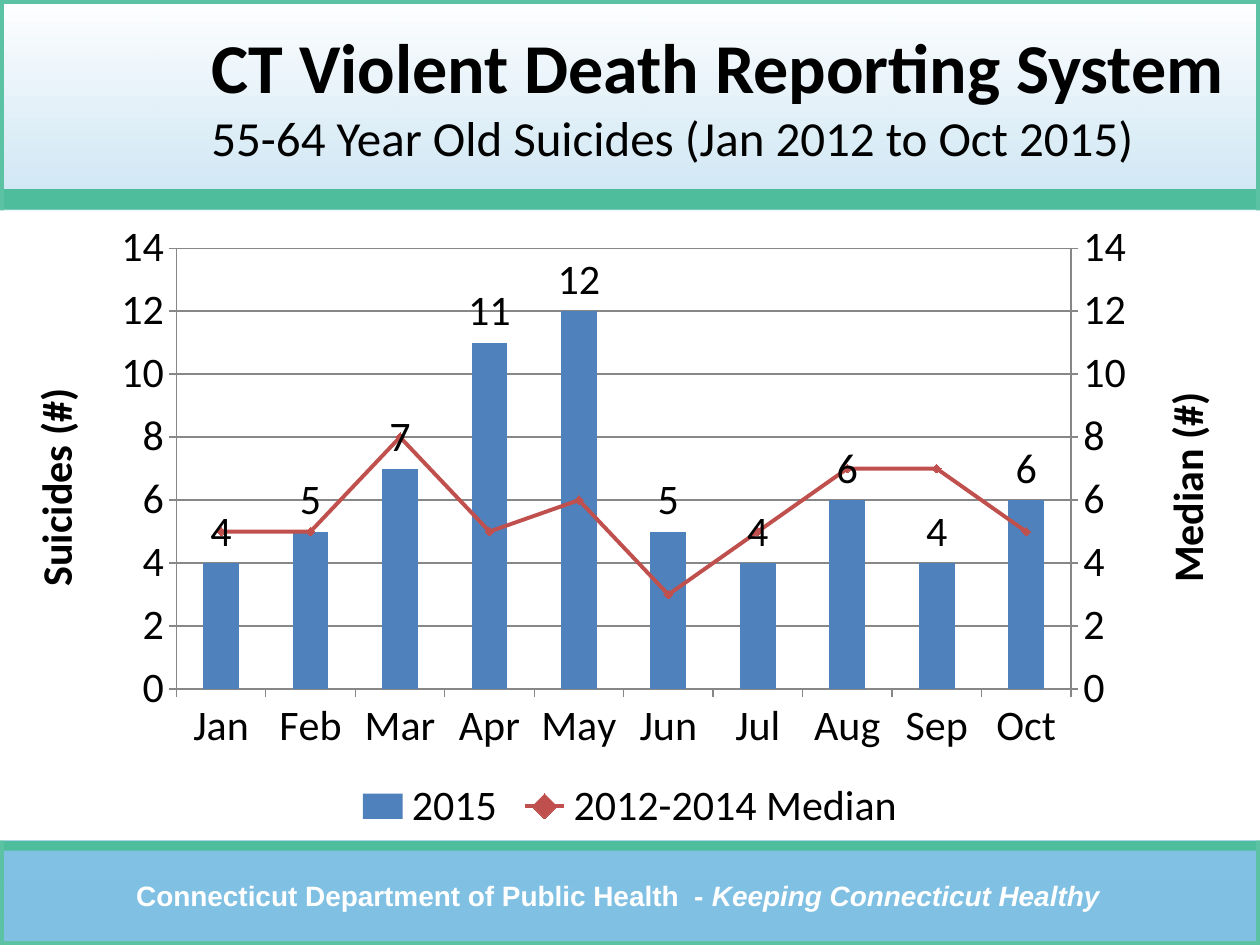
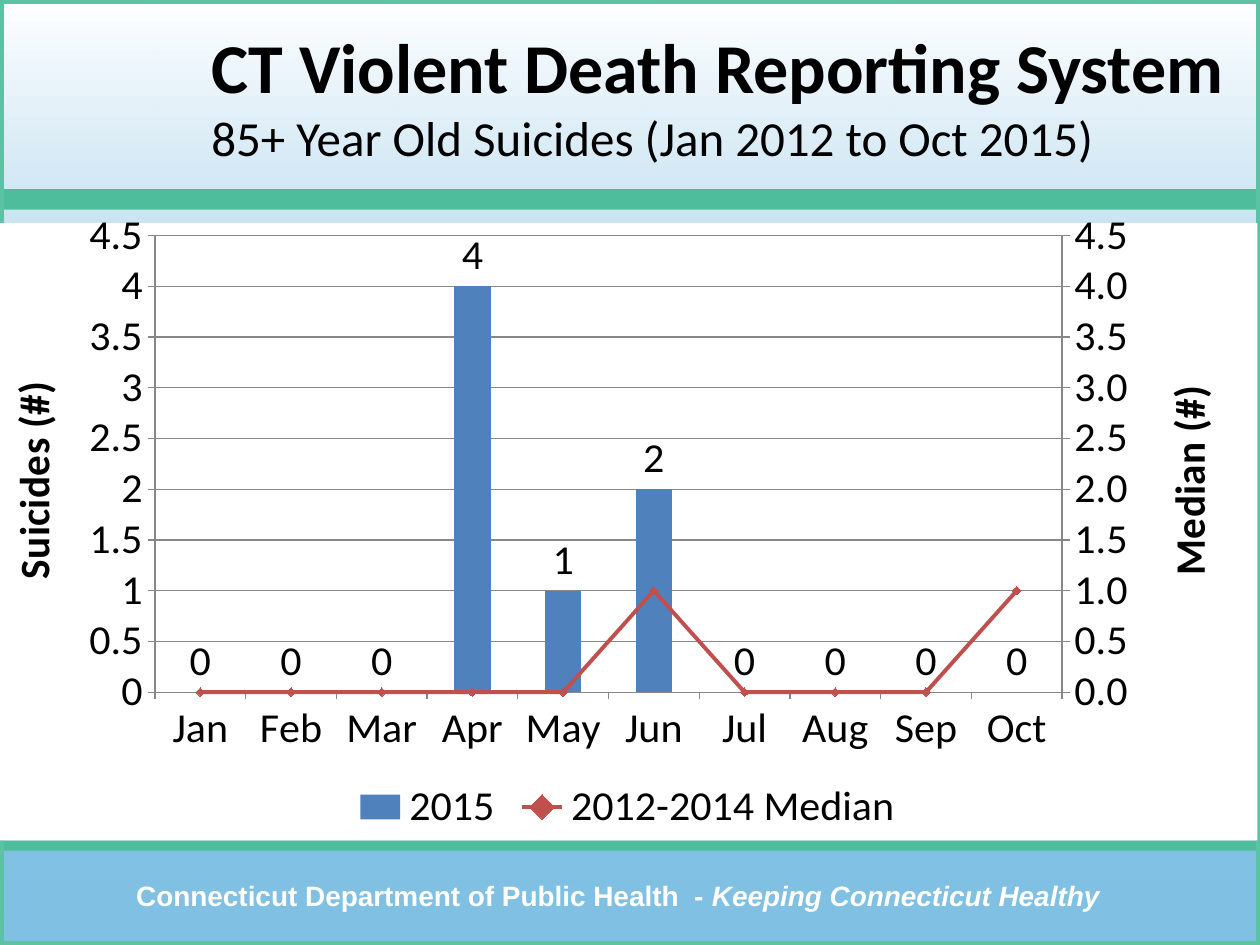
from copy import deepcopy
from pptx import Presentation
from pptx.util import Inches, Pt
from pptx.dml.color import RGBColor
from pptx.chart.data import CategoryChartData as Data
from pptx.enum.chart import XL_CHART_TYPE as Kind, XL_LEGEND_POSITION as Spot
from pptx.enum.chart import XL_LABEL_POSITION as Label, XL_MARKER_STYLE as Mark
from pptx.enum.chart import XL_TICK_MARK as Tick
from pptx.enum.shapes import MSO_SHAPE as Shape
from pptx.enum.text import MSO_ANCHOR as Anchor, PP_ALIGN as Align
from pptx.oxml import parse_xml
from pptx.oxml.ns import qn, nsdecls

WIDE, HIGH = 10, 7.5
HEAD, FOOT = 0.2, 0.89
TOP, BODY = 1.67, 5
GREEN, EDGE, BLUE, GREY = "4DBD9C", "5BC2A4", "0082C8", "878787"
BAR, LINE, BLACK, WHITE = "4F81BD", "C0504D", "000000", "FFFFFF"
MONTHS = "Jan Feb Mar Apr May Jun Jul Aug Sep Oct".split()
SLIDES = [
    dict(ages="55-64", left=0, count=[4, 5, 7, 11, 12, 5, 4, 6, 4, 6],
         median=[5, 5, 8, 5, 6, 3, 5, 7, 7, 5], top=14, step=2,
         form="General", area=(0.14, 0.06, 0.71, 0.7)),
    dict(ages="85+", left=-0.02, count=[0, 0, 0, 4, 1, 2, 0, 0, 0, 0],
         median=[0, 0, 0, 0, 0, 1, 0, 0, 0, 1], top=4.5, step=0.5,
         form="0.0", area=(0.125, 0.02, 0.72, 0.74)),
]


def rgb(code):
    return RGBColor.from_string(code)


def style(font, size=24, face="Calibri", color=BLACK, bold=False, slant=False):
    font.size, font.name = Pt(size), face
    font.bold, font.italic = bold, slant
    font.color.rgb = rgb(color)


def write(par, text, **form):
    run = par.add_run()
    run.text = text
    style(run.font, **form)


def box(slide, x, y, w, h, align=Align.LEFT):
    frame = slide.shapes.add_textbox(*map(Inches, (x, y, w, h))).text_frame
    frame.word_wrap = True
    frame.vertical_anchor = Anchor.MIDDLE
    par = frame.paragraphs[0]
    par.alignment = align
    return par


def rect(slide, top=0, tall=1, color=None):
    shape = slide.shapes.add_shape(
        Shape.RECTANGLE, 0, Inches(top * HIGH), Inches(WIDE), Inches(tall * HIGH))
    shape.shadow.inherit = False
    shape.line.fill.background()
    if color:
        shape.fill.solid()
        shape.fill.fore_color.rgb = rgb(color)
    return shape


def fade(slide):
    fill = rect(slide).fill
    fill.gradient()
    fill.gradient_angle = 90
    for stop, color, place in zip(fill.gradient_stops, (BLUE, WHITE), (0, 1)):
        stop.color.rgb = rgb(color)
        stop.position = place
    tint = fill._xPr.find(".//" + qn("a:srgbClr"))
    tint.append(parse_xml(f'<a:alpha {nsdecls("a")} val="50000"/>'))


def border(slide):
    shape = rect(slide)
    shape.fill.background()
    shape.line.color.rgb = rgb(EDGE)
    shape.line.width = Pt(4.5)


def base(slide):
    fade(slide)
    rect(slide, FOOT, 0.01, GREEN)
    par = box(slide, 0.49, 6.92, 8.83, 0.37, Align.CENTER)
    form = dict(size=16, face="Arial", color=WHITE, bold=True)
    write(par, "Connecticut Department of Public Health  - ", **form)
    write(par, "Keeping Connecticut Healthy", slant=True, **form)
    rect(slide, HEAD, 0.022, GREEN)
    border(slide)


def title(slide, ages):
    par = box(slide, 1.58, 0, 8.33, HEAD * HIGH)
    write(par, "CT Violent Death Reporting System", size=40, bold=True)
    par.add_line_break()
    write(par, f"{ages} Year Old Suicides (Jan 2012 to Oct 2015)", size=28)


def name(axis, text):
    frame = axis.axis_title.text_frame
    write(frame.paragraphs[0], text, bold=True)
    body = frame._txBody.find(qn("a:bodyPr"))
    body.set("rot", "-5400000")
    body.set("vert", "horz")


def rule(axis):
    axis.major_tick_mark, axis.minor_tick_mark = Tick.OUTSIDE, Tick.NONE
    axis.format.line.color.rgb = rgb(GREY)


def scale(axis, top, step):
    rule(axis)
    axis.minimum_scale, axis.maximum_scale, axis.major_unit = 0, top, step
    axis.has_major_gridlines = True
    axis.major_gridlines.format.line.color.rgb = rgb(GREY)
    axis.tick_labels.number_format = "General"
    axis.tick_labels.number_format_is_linked = False
    name(axis, "Suicides (#)")


def put(node, tag, val):
    node.find(qn(tag)).set("val", val)


def split(chart, form):
    plot = chart._chartSpace.find(".//" + qn("c:plotArea"))
    bars = plot.find(qn("c:barChart"))
    line = parse_xml(
        f'<c:lineChart {nsdecls("c")}><c:grouping val="standard"/>'
        '<c:varyColors val="0"/><c:marker val="1"/>'
        '<c:axId val="5001"/><c:axId val="5002"/></c:lineChart>')
    ser = bars.findall(qn("c:ser"))[1]
    flip = ser.find(qn("c:invertIfNegative"))
    if flip is not None:
        ser.remove(flip)
    line.insert(2, ser)
    bars.addnext(line)
    cat, val = plot.find(qn("c:catAx")), plot.find(qn("c:valAx"))
    right, base = deepcopy(val), deepcopy(cat)
    val.addnext(right)
    right.addnext(base)
    for axis, own, other in ((right, "5002", "5001"), (base, "5001", "5002")):
        put(axis, "c:axId", own)
        put(axis, "c:crossAx", other)
    put(right, "c:axPos", "r")
    put(right, "c:crosses", "max")
    put(base, "c:delete", "1")
    right.remove(right.find(qn("c:majorGridlines")))
    right.find(qn("c:numFmt")).set("formatCode", form)
    right.find(".//" + qn("a:t")).text = "Median (#)"


def place(chart, area):
    plot = chart._chartSpace.find(".//" + qn("c:plotArea"))
    for old in plot.findall(qn("c:layout")):
        plot.remove(old)
    parts = "".join(f'<c:{k} val="{v}"/>' for k, v in zip("xywh", area))
    plot.insert(0, parse_xml(
        f'<c:layout {nsdecls("c")}><c:manualLayout><c:layoutTarget val="inner"/>'
        '<c:xMode val="edge"/><c:yMode val="edge"/>'
        f'{parts}</c:manualLayout></c:layout>'))


def back(chart):
    chart._chartSpace.find(qn("c:txPr")).addprevious(parse_xml(
        f'<c:spPr {nsdecls("c", "a")}><a:solidFill><a:srgbClr val="{WHITE}"/>'
        '</a:solidFill><a:ln><a:noFill/></a:ln></c:spPr>'))


def paint(chart):
    bars, line = [plot.series[0] for plot in chart.plots]
    bars.format.fill.solid()
    bars.format.fill.fore_color.rgb = rgb(BAR)
    tags = bars.data_labels
    tags.show_value, tags.position = True, Label.OUTSIDE_END
    style(tags.font)
    line.smooth = False
    line.format.line.color.rgb = rgb(LINE)
    line.format.line.width = Pt(2.25)
    line.marker.style, line.marker.size = Mark.DIAMOND, 5
    look = line.marker.format
    look.fill.solid()
    look.fill.fore_color.rgb = rgb(LINE)
    look.line.color.rgb = rgb(LINE)


def graph(slide, left, count, median, top, step, form, area):
    data = Data()
    data.categories = MONTHS
    data.add_series("2015", count)
    data.add_series("2012-2014 Median", median)
    chart = slide.shapes.add_chart(
        Kind.COLUMN_CLUSTERED, *map(Inches, (left, TOP, WIDE, BODY)), data).chart
    style(chart.font)
    chart.has_title = False
    chart.has_legend = True
    chart.legend.position = Spot.BOTTOM
    chart.legend.include_in_layout = False
    chart.plots[0].gap_width = 150
    chart.plots[0].vary_by_categories = False
    rule(chart.category_axis)
    scale(chart.value_axis, top, step)
    split(chart, form)
    place(chart, area)
    back(chart)
    paint(chart)


def main():
    deck = Presentation()
    deck.slide_width, deck.slide_height = Inches(WIDE), Inches(HIGH)
    for ages, *rest in (item.values() for item in SLIDES):
        slide = deck.slides.add_slide(deck.slide_layouts[6])
        base(slide)
        title(slide, ages)
        graph(slide, *rest)
    deck.save("out.pptx")


if __name__ == "__main__":
    main()
